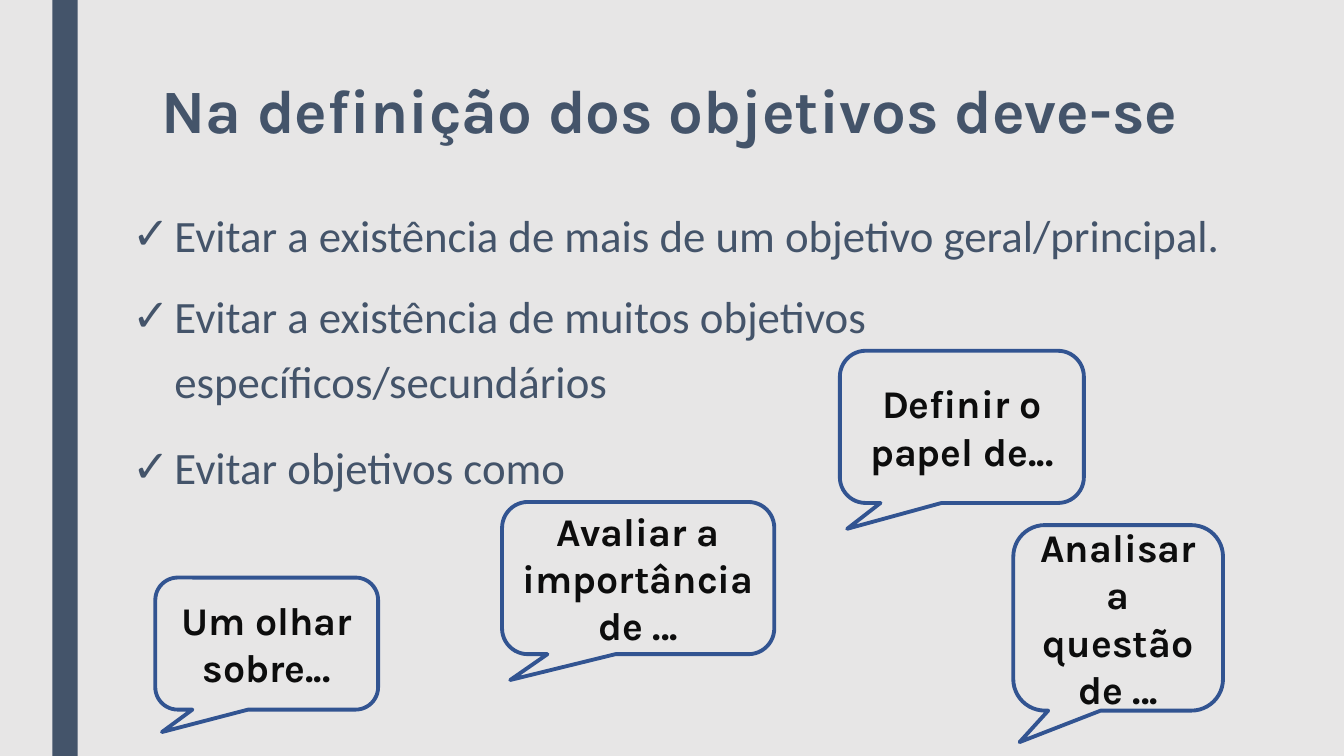
from lxml.etree import SubElement
from pptx import Presentation
from pptx.dml.color import RGBColor
from pptx.enum.shapes import MSO_SHAPE as Shape
from pptx.enum.text import MSO_ANCHOR as Anchor, MSO_AUTO_SIZE as AutoSize, PP_ALIGN as Align
from pptx.oxml.ns import qn
from pptx.util import Inches, Pt

COLORS = {"background": "E7E6E6", "slate": "44546A", "outline": "325491", "ink": "0D0D0D"}
BULLETS = [
    ("Evitar a existência de mais de um objetivo geral/principal.", 1.2),
    ("Evitar a existência de muitos objetivos específicos/secundários", 1.2),
    ("Evitar objetivos como", 1.3),
]
CALLOUTS = [
    ("Definir o papel de...", 8.33, 3.48, 2.42, 1.51),
    ("Avaliar a importância de ...", 4.98, 4.98, 2.7, 1.51),
    ("Um olhar sobre...", 1.54, 5.73, 2.21, 1.31),
    ("Analisar a questão de ...", 10.05, 5.21, 2.08, 1.84),
]


def place(shape, left, top, width, height):
    shape.left, shape.top = Inches(left), Inches(top)
    shape.width, shape.height = Inches(width), Inches(height)


def style_text(paragraph, font_name, size, color, bold, align):
    paragraph.alignment = align
    for run in paragraph.runs:
        run.font.name = font_name
        run.font.size = Pt(size)
        run.font.bold = bold
        run.font.color.rgb = RGBColor.from_string(COLORS[color])


presentation = Presentation()
presentation.slide_width = Inches(13.33)
presentation.slide_height = Inches(7.5)
slide = presentation.slides.add_slide(presentation.slide_layouts[1])
slide.background.fill.solid()
slide.background.fill.fore_color.rgb = RGBColor.from_string(COLORS["background"])

side_bar = slide.shapes.add_shape(
    Shape.RECTANGLE, Inches(0.52), 0, Inches(0.25), presentation.slide_height)
side_bar.shadow.inherit = False
side_bar.fill.solid()
side_bar.fill.fore_color.rgb = RGBColor.from_string(COLORS["slate"])
side_bar.line.fill.background()

title = slide.shapes.title
place(title, 1.5, 0.75, 10.5, 1.62)
title.text_frame.text = "Na definição dos objetivos deve-se"
title.text_frame.auto_size = AutoSize.NONE
title.text_frame.vertical_anchor = Anchor.TOP
title_paragraph = title.text_frame.paragraphs[0]
title_paragraph.line_spacing = 0.89
style_text(title_paragraph, "Karla", 44, "slate", True, Align.LEFT)

body = slide.placeholders[1]
place(body, 1.21, 1.9, 11.75, 4.71)
body.text_frame.text = "\n".join(text for text, spacing in BULLETS)
body.text_frame.auto_size = AutoSize.NONE
body.text_frame.vertical_anchor = Anchor.TOP
for paragraph, (text, spacing) in zip(body.text_frame.paragraphs, BULLETS):
    style_text(paragraph, "Calibri", 32, "slate", False, Align.LEFT)
    paragraph.line_spacing = spacing
    paragraph.space_before = Pt(10)
    paragraph.space_after = Pt(2)
    properties = paragraph._p.get_or_add_pPr()
    properties.set("marL", str(Inches(0.42)))
    properties.set("indent", str(-Inches(0.42)))
    SubElement(properties, qn("a:buChar")).set("char", "✓")

for text, left, top, width, height in CALLOUTS:
    callout = slide.shapes.add_shape(
        Shape.ROUNDED_RECTANGULAR_CALLOUT,
        Inches(left), Inches(top), Inches(width), Inches(height))
    callout.adjustments[0] = -0.47
    callout.adjustments[1] = 0.67
    callout.adjustments[2] = 0.17
    callout.shadow.inherit = False
    callout.fill.background()
    callout.line.color.rgb = RGBColor.from_string(COLORS["outline"])
    callout.line.width = Pt(2.75)
    callout.text_frame.text = text
    callout.text_frame.word_wrap = True
    callout.text_frame.vertical_anchor = Anchor.MIDDLE
    style_text(callout.text_frame.paragraphs[0], "Karla", 28, "ink", True, Align.CENTER)

presentation.save("out.pptx")
